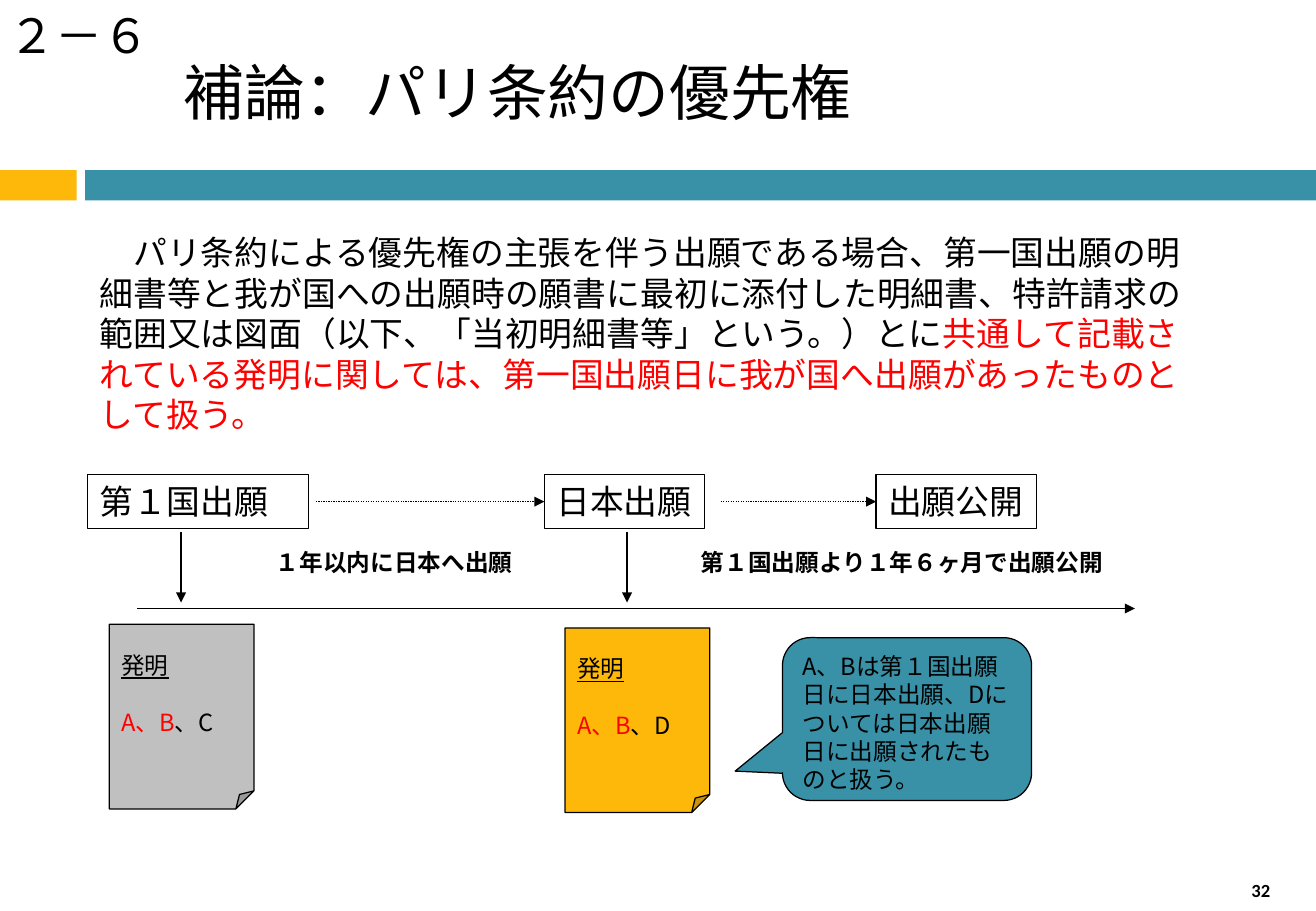
"""Build the slide on the priority right of the Paris Convention."""
from lxml.etree import SubElement
from pptx import Presentation
from pptx.dml.color import RGBColor
from pptx.enum.dml import MSO_LINE
from pptx.enum.shapes import MSO_CONNECTOR, MSO_SHAPE
from pptx.enum.text import MSO_ANCHOR, MSO_AUTO_SIZE, PP_ALIGN
from pptx.oxml.ns import qn
from pptx.util import Inches, Pt

COLORS = {"black": "000000", "red": "FF0000", "gold": "FEB80A",
          "teal": "3891A7", "gray": "C0C0C0"}
JAPANESE, LATIN = "Noto Sans CJK JP", "Calibri"
WIDTH, HEIGHT = Inches(10.83), Inches(7.5)

BARS = [((0, 18.67, 5.82, 3.33), "gold"), ((6.46, 18.67, 93.54, 3.33), "teal")]
BODY_PLACE = (6.65, 24.8, 85.04, 19.33)
BODY = [
    ("　パリ条約による優先権の主張を伴う出願である場合、第一国出願の明細書等と"
     "我が国への出願時の願書に最初に添付した明細書、特許請求の範囲又は図面"
     "（以下、「当初明細書等」という。）とに", "black"),
    ("共通して記載されている発明に関しては、第一国出願日に我が国へ出願があった"
     "ものとして扱う。", "red"),
]
STEP_TOP, STEP_HEIGHT = 52.13, 5.87
STEPS = [("第１国出願", 6.65, 16.81, True, None),
         ("日本出願", 41.37, 12.19, False, 24.01),
         ("出願公開", 66.57, 12.19, False, 54.76)]
ARROWS = [(10.43, 66.8, 86.24, 66.8), (13.76, 58.4, 13.76, 66.13),
          (47.65, 58.4, 47.65, 66.13)]
LABELS = [("１年以内に日本へ出願", (20.04, 59.47, 20.04, 4.53), False),
          ("第１国出願より１年６ヶ月で出願公開", (52.35, 59.47, 34.72, 4.4), True)]
NOTES = [("、C", (8.31, 68.53, 10.99, 20.27), "gray"),
         ("、D", (42.94, 68.93, 10.99, 20.27), "gold")]
NOTE_LINE = Pt(17)
CALLOUT = "A、Bは第１国出願日に日本出願、Dについては日本出願日に出願されたものと扱う。"
CALLOUT_PLACE = (59.46, 70, 18.93, 17.87)
SECTION, SECTION_PLACE = "２－６", (-0.28, 0, 18.65, 7.6)
TITLE, TITLE_PLACE = "補論：パリ条約の優先権", (13.02, 2.8, 89.2, 14.4)
PAGE, PAGE_PLACE = "32", (94.18, 96.27, 5.82, 3.6)


def color(name):
    return RGBColor.from_string(COLORS[name])


def scale(place):
    return [int(share * (HEIGHT if index % 2 else WIDTH) / 100)
            for index, share in enumerate(place)]


def add_box(slide, kind, place, fill=None, outlined=True):
    shape = slide.shapes.add_shape(kind, *scale(place))
    shape.shadow.inherit = False
    if fill:
        shape.fill.solid()
        shape.fill.fore_color.rgb = color(fill)
    else:
        shape.fill.background()
    if outlined:
        shape.line.color.rgb = color("black")
        shape.line.width = Pt(0.75)
    else:
        shape.line.fill.background()
    return shape


def add_runs(paragraph, runs, size, bold=False, underline=False, font=JAPANESE):
    paragraph.alignment = PP_ALIGN.LEFT
    for text, name in runs:
        run = paragraph.add_run()
        run.text = text
        run.font.size = Pt(size)
        run.font.bold = bold
        run.font.underline = underline
        run.font.color.rgb = color(name)
        run.font.name = font
        SubElement(run.font._element, qn("a:ea"), typeface=font)


def write(shape, runs, size, wrap=True, anchor=MSO_ANCHOR.TOP, grow=False, **style):
    frame = shape.text_frame
    frame.word_wrap = wrap
    frame.vertical_anchor = anchor
    frame.auto_size = MSO_AUTO_SIZE.SHAPE_TO_FIT_TEXT if grow else MSO_AUTO_SIZE.NONE
    add_runs(frame.paragraphs[0], runs, size, **style)
    return frame


def add_text(slide, place, runs, size, **style):
    return write(slide.shapes.add_textbox(*scale(place)), runs, size, **style)


def add_arrow(slide, ends, dotted=False):
    arrow = slide.shapes.add_connector(MSO_CONNECTOR.STRAIGHT, *scale(ends))
    arrow.line.color.rgb = color("black")
    arrow.line.width = Pt(0.75)
    if dotted:
        arrow.line.dash_style = MSO_LINE.ROUND_DOT
    SubElement(arrow.line._get_or_add_ln(), qn("a:tailEnd"), type="triangle")
    SubElement(arrow._element.spPr, qn("a:effectLst"))
    return arrow


def add_steps(slide):
    middle = STEP_TOP + STEP_HEIGHT / 2
    for text, left, width, wrap, arrow_start in STEPS:
        place = (left, STEP_TOP, width, STEP_HEIGHT)
        step = add_box(slide, MSO_SHAPE.RECTANGLE, place)
        write(step, [(text, "black")], 20, wrap=wrap, grow=True)
        if arrow_start:
            arrow = add_arrow(slide, (arrow_start, middle, left, middle), dotted=True)
            arrow.end_connect(step, 1)


def fold_corner(shape):
    geometry = shape._element.spPr.find(qn("a:prstGeom"))
    geometry.set("prst", "foldedCorner")
    adjustments = geometry.find(qn("a:avLst"))
    for guide in list(adjustments):
        adjustments.remove(guide)
    SubElement(adjustments, qn("a:gd"), name="adj", fmla="val 12500")


def add_notes(slide):
    for ending, place, fill in NOTES:
        note = add_box(slide, MSO_SHAPE.RECTANGLE, place, fill)
        fold_corner(note)
        frame = write(note, [("発明", "black")], 14, wrap=False,
                      anchor=MSO_ANCHOR.MIDDLE, underline=True)
        frame.margin_bottom = Inches(0.05) + NOTE_LINE
        paragraph = frame.add_paragraph()
        paragraph.space_before = NOTE_LINE
        add_runs(paragraph, [("A、B", "red"), (ending, "black")], 14)


def add_callout(slide):
    callout = add_box(slide, MSO_SHAPE.ROUNDED_RECTANGULAR_CALLOUT, CALLOUT_PLACE, "teal")
    for index, value in enumerate((-0.69, 0.32, 0.17)):
        callout.adjustments[index] = value
    write(callout, [(CALLOUT, "black")], 14)


def main():
    presentation = Presentation()
    presentation.slide_width, presentation.slide_height = WIDTH, HEIGHT
    slide = presentation.slides.add_slide(presentation.slide_layouts[6])
    for place, fill in BARS:
        add_box(slide, MSO_SHAPE.RECTANGLE, place, fill, outlined=False)
    add_text(slide, BODY_PLACE, BODY, 20, grow=True)
    add_steps(slide)
    for ends in ARROWS:
        add_arrow(slide, ends)
    for text, place, wrap in LABELS:
        add_text(slide, place, [(text, "black")], 14, wrap=wrap, grow=True, bold=True)
    add_notes(slide)
    add_callout(slide)
    add_text(slide, SECTION_PLACE, [(SECTION, "black")], 28, grow=True)
    add_text(slide, TITLE_PLACE, [(TITLE, "black")], 36, anchor=MSO_ANCHOR.MIDDLE)
    page = add_text(slide, PAGE_PLACE, [(PAGE, "black")], 11, bold=True, font=LATIN)
    page.paragraphs[0].line_spacing = 0.8
    presentation.save("out.pptx")


if __name__ == "__main__":
    main()
